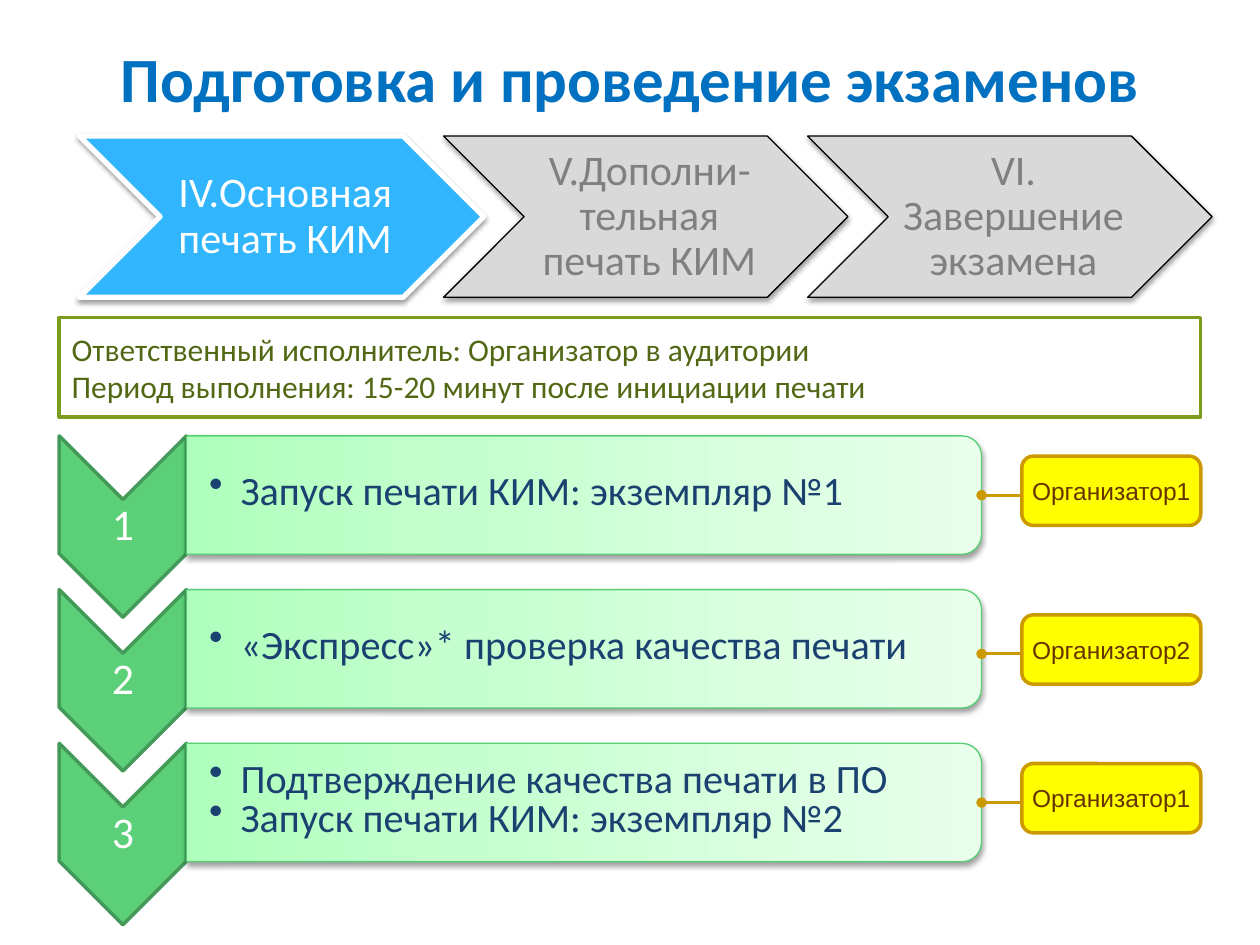
from lxml import etree
from pptx import Presentation
from pptx.dml.color import RGBColor
from pptx.enum.shapes import MSO_CONNECTOR, MSO_SHAPE as Preset
from pptx.enum.text import MSO_ANCHOR, PP_ALIGN as Align
from pptx.oxml.ns import qn
from pptx.util import Inches, Pt

COLORS = {
    "title": "0070C0", "white": "FFFFFF",
    "current": "31B6FD", "later": "D9D9D9", "later_text": "808080", "later_line": "000000",
    "info_line": "7C9C1E", "info_text": "526814",
    "arrow": "5BD078", "arrow_line": "439A59",
    "bar_line": "56CE74", "bar_text": "1B4171",
    "badge": "FFFF00", "badge_line": "CC9900", "badge_text": "663300",
    "shadow": "000000",
}
BAR_GRADIENT = [(0, "AEFFBC"), (35, "C6FFCF"), (100, "E9FFEC")]

TITLE = "Подготовка и проведение экзаменов"
STAGES = [  # text, fill, line, line width, text colour
    ("IV.Основная печать КИМ", "current", "white", 3, "white"),
    ("V.Дополни-тельная печать КИМ", "later", "later_line", 0.75, "later_text"),
    ("VI. Завершение экзамена", "later", "later_line", 0.75, "later_text"),
]
INFO = [
    "Ответственный исполнитель: Организатор в аудитории",
    "Период выполнения: 15-20 минут после инициации печати",
]
STEPS = [  # bullets, performer, top of the performer badge
    (["Запуск печати КИМ: экземпляр №1"], "Организатор1", 3.62),
    (["«Экспресс»* проверка качества печати"], "Организатор2", 4.88),
    (["Подтверждение качества печати в ПО", "Запуск печати КИМ: экземпляр №2"],
     "Организатор1", 6.06),
]

LEFT, RIGHT = 0.47, 9.53
STAGE_LEFT, STAGE_TOP, STAGE_PITCH = 0.63, 1.08, 2.89
STAGE_WIDTH, STAGE_HEIGHT = 3.21, 1.28
STEP_TOP, STEP_PITCH = 3.46, 1.22
ARROW_WIDTH, ARROW_HEIGHT = 1.01, 1.44
BAR_WIDTH, BAR_HEIGHT = 6.31, 0.94
BADGE_LEFT, BADGE_HEIGHT = 8.11, 0.55

deck = Presentation()
deck.slide_width, deck.slide_height = Inches(10), Inches(7.5)
slide = deck.slides.add_slide(deck.slide_layouts[5])


def rgb(name):
    return RGBColor.from_string(COLORS[name])


def add_preset(preset, left, top, width, height, fill, line, line_width, quarter_turn=False):
    """Add a shape covering the given area, also when it is turned by 90 degrees."""
    if quarter_turn:
        left, top = left + (width - height) / 2, top + (height - width) / 2
        width, height = height, width
    shape = slide.shapes.add_shape(
        preset, Inches(left), Inches(top), Inches(width), Inches(height))
    shape.rotation = 90 if quarter_turn else 0
    shape.shadow.inherit = False
    if fill:
        shape.fill.solid()
        shape.fill.fore_color.rgb = rgb(fill)
    shape.line.color.rgb = rgb(line)
    shape.line.width = Pt(line_width)
    return shape


def add_shadow(shape):
    effects = shape.element.spPr.find(qn("a:effectLst"))
    shadow = etree.SubElement(effects, qn("a:outerShdw"), blurRad=str(Pt(3.1)),
                              dist=str(Pt(1.6)), dir="5400000", rotWithShape="0")
    color = etree.SubElement(shadow, qn("a:srgbClr"), val=COLORS["shadow"])
    etree.SubElement(color, qn("a:alpha"), val="38000")


def fill_gradient(shape, stops):
    shape.fill.gradient()
    shape.fill.gradient_angle = 90
    stop_list = shape.element.spPr.find(qn("a:gradFill")).find(qn("a:gsLst"))
    for old_stop in list(stop_list):
        stop_list.remove(old_stop)
    for percent, color in stops:
        stop = etree.SubElement(stop_list, qn("a:gs"), pos=str(percent * 1000))
        etree.SubElement(stop, qn("a:srgbClr"), val=color)


def write(shape, lines, size, color, font="Calibri", align=Align.CENTER, bold=False,
          margins=(0.1, 0.05, 0.1, 0.05), spacing=None, after=0, bullets=False):
    """Fill a shape with one paragraph per line; margins run left, top, right, bottom."""
    frame = shape.text_frame
    frame.word_wrap = True
    frame.vertical_anchor = MSO_ANCHOR.MIDDLE
    (frame.margin_left, frame.margin_top,
     frame.margin_right, frame.margin_bottom) = map(Inches, margins)
    frame.text = "\n".join(lines)
    for para in frame.paragraphs:
        para.alignment = align
        if bullets:
            properties = para._p.get_or_add_pPr()
            properties.set("marL", str(Inches(0.25)))
            properties.set("indent", str(-Inches(0.25)))
            etree.SubElement(properties, qn("a:buChar"), char="•")
        if spacing:
            para.line_spacing = spacing
            para.space_after = Pt(after)
        for span in para.runs:
            span.font.name = font
            span.font.size = Pt(size)
            span.font.bold = bold
            span.font.color.rgb = rgb(color)


def add_text(left, top, width, height, lines, size, color, **style):
    box = slide.shapes.add_textbox(Inches(left), Inches(top), Inches(width), Inches(height))
    write(box, lines, size, color, **style)


def add_dotted_end_line(x1, x2, y):
    line = slide.shapes.add_connector(
        MSO_CONNECTOR.STRAIGHT, Inches(x1), Inches(y), Inches(x2), Inches(y))
    line.line.color.rgb = rgb("badge_line")
    line.line.width = Pt(1.75)
    properties = line.element.spPr
    etree.SubElement(properties.find(qn("a:ln")), qn("a:tailEnd"), type="oval")
    etree.SubElement(properties, qn("a:effectLst"))


title = slide.shapes.title
title.left, title.top, title.width, title.height = map(Inches, (0.5, 0.18, 9, 0.87))
write(title, [TITLE], 36, "title", bold=True)

info = add_preset(Preset.RECTANGLE, LEFT, 2.52, RIGHT - LEFT, 0.79, "white", "info_line", 2)
write(info, INFO, 18, "info_text", align=Align.LEFT)

for index, (text, fill, line, line_width, text_color) in enumerate(STAGES):
    left = STAGE_LEFT + index * STAGE_PITCH
    add_shadow(add_preset(Preset.CHEVRON, left, STAGE_TOP, STAGE_WIDTH, STAGE_HEIGHT,
                          fill, line, line_width))
    add_text(left + STAGE_HEIGHT / 2, STAGE_TOP, STAGE_WIDTH - STAGE_HEIGHT, STAGE_HEIGHT,
             [text], 24, text_color, margins=(0.1, 0.04, 0.04, 0.04), spacing=0.9)

for index, (bullets, performer, badge_top) in enumerate(STEPS):
    top = STEP_TOP + index * STEP_PITCH
    bar_left = LEFT + ARROW_WIDTH
    add_preset(Preset.CHEVRON, LEFT, top, ARROW_WIDTH, ARROW_HEIGHT,
               "arrow", "arrow_line", 2, quarter_turn=True)
    add_text(LEFT, top + ARROW_WIDTH / 2, ARROW_WIDTH, ARROW_HEIGHT - ARROW_WIDTH,
             [str(index + 1)], 25, "white", margins=(0.02,) * 4, spacing=0.9)

    bar = add_preset(Preset.ROUND_2_SAME_RECTANGLE, bar_left, top, BAR_WIDTH, BAR_HEIGHT,
                     None, "bar_line", 0.75, quarter_turn=True)
    fill_gradient(bar, BAR_GRADIENT)
    add_shadow(bar)
    add_text(bar_left, top + 0.05, BAR_WIDTH - 0.04, BAR_HEIGHT - 0.09, bullets, 23,
             "bar_text", align=Align.LEFT, margins=(0.18, 0.02, 0.02, 0.02),
             spacing=0.7, after=3, bullets=True)

    add_dotted_end_line(BADGE_LEFT, bar_left + BAR_WIDTH, badge_top + 0.31)
    badge = add_preset(Preset.ROUNDED_RECTANGLE, BADGE_LEFT, badge_top, RIGHT - BADGE_LEFT,
                       BADGE_HEIGHT, "badge", "badge_line", 2)
    write(badge, [performer], 14, "badge_text", font="Arial",
          margins=(0.04, 0.05, 0.04, 0.05))

deck.save("out.pptx")
